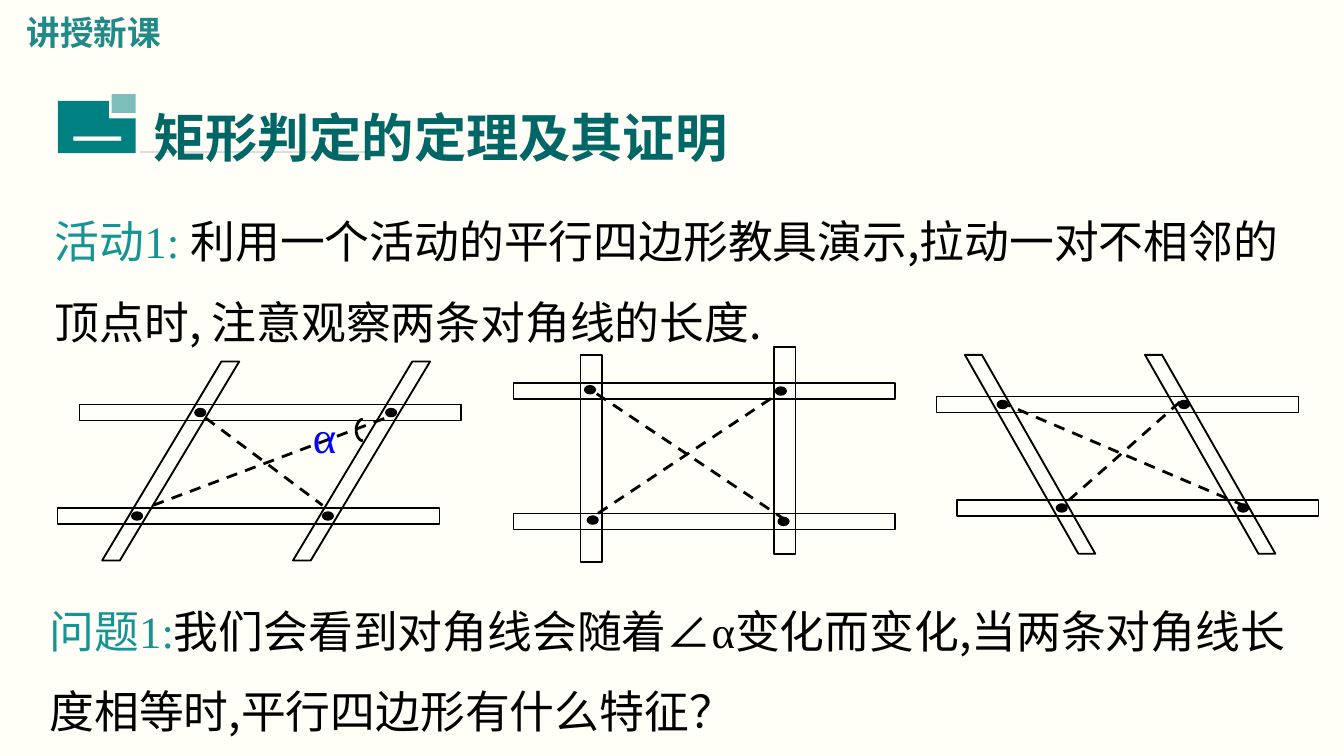
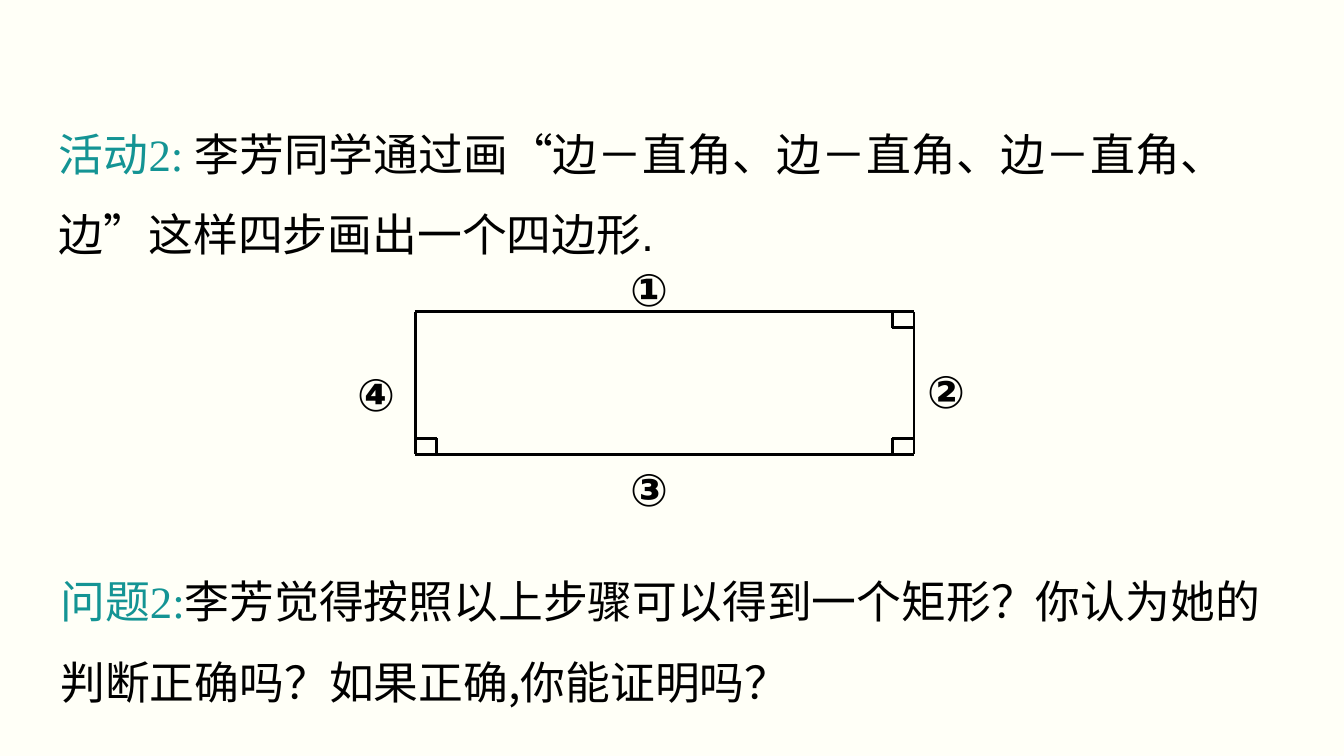
"""Build two lesson slides on how to tell a rectangle."""
from dataclasses import dataclass
from math import cos, pi, sin

from lxml.etree import SubElement
from pptx import Presentation
from pptx.dml.color import RGBColor as Rgb
from pptx.enum.dml import MSO_LINE as Dash
from pptx.enum.shapes import MSO_CONNECTOR as Link, MSO_SHAPE as Kind
from pptx.enum.text import MSO_ANCHOR as Anchor, MSO_AUTO_SIZE as Fit, PP_ALIGN as Align
from pptx.oxml.ns import qn
from pptx.util import Pt

PX = 9144


@dataclass(frozen=True)
class Theme:
    """Colours, fonts and type sizes."""
    back: str = "FFFFF7"
    ink: str = "000000"
    teal: str = "008080"
    head: str = "006666"
    tab: str = "228989"
    label: str = "149494"
    angle: str = "0000FF"
    rule: str = "DDDDDD"
    sans: str = "Arial"
    serif: str = "Times New Roman"
    han: str = "Noto Sans CJK SC"
    small: int = 18
    body: int = 24
    big: int = 28
    thin: float = 0.75
    mid: float = 1
    bold: float = 1.5


T = Theme()


@dataclass(frozen=True)
class Frame:
    """Parts of a hinged frame, relative to its box."""
    box: tuple
    width: int
    bars: tuple
    kind: Kind
    size: tuple
    rails: tuple
    dots: tuple
    dashes: tuple
    flip: bool = False


FRAMES = (
    Frame((43, 269), 284, ((16, 32), (0, 109)), Kind.PARALLELOGRAM, (102, 148),
          ((175, 0), (33, 0)), ((102, 35), (244, 35), (197, 112), (55, 112)),
          ((110, 42, 197, 107), (71, 107, 244, 42))),
    Frame((382, 258), 284, ((0, 124), (0, 27)), Kind.RECTANGLE, (16, 154),
          ((50, 6), (194, 0)), ((197, 127), (55, 126), (195, 30), (53, 29)),
          ((63, 124, 197, 35), (62, 35, 204, 130))),
    Frame((697, 264), 269, ((0, 31), (15, 108)), Kind.PARALLELOGRAM, (97, 148),
          ((21, 0), (155, 0)), ((180, 34), (45, 34), (89, 111), (224, 111)),
          ((181, 35, 94, 112), (47, 35, 228, 112)), True),
)


def emu(*nums):
    """Turn px into EMU."""
    return [round(n * PX) for n in nums]


def paint(shape, fill=None, line=None, width=T.thin):
    """Set the fill, line and shadow of a shape."""
    shape.shadow.inherit = False
    if fill:
        shape.fill.solid()
        shape.fill.fore_color.rgb = Rgb.from_string(fill)
    else:
        shape.fill.background()
    if line:
        shape.line.color.rgb = Rgb.from_string(line)
        shape.line.width = Pt(width)
    else:
        shape.line.fill.background()
    return shape


def block(slide, kind, box, **look):
    """Add a preset shape."""
    return paint(slide.shapes.add_shape(kind, *emu(*box)), **look)


def trace(slide, points, close, **look):
    """Add an outline through points."""
    pen = slide.shapes.build_freeform(*emu(*points[0]))
    pen.add_line_segments([emu(*p) for p in points[1:]], close=close)
    return paint(pen.convert_to_shape(), **look)


def rule(slide, ends, color=T.ink, width=T.bold, dash=False):
    """Add a straight line."""
    line = slide.shapes.add_connector(Link.STRAIGHT, *emu(*ends))
    line.line.color.rgb = Rgb.from_string(color)
    line.line.width = Pt(width)
    if dash:
        line.line.dash_style = Dash.DASH
    SubElement(line._element.spPr, qn("a:effectLst"))


def style(font, size, face, color, bold=False):
    """Set a font."""
    font.size, font.name, font.bold = Pt(size), face, bold
    font.color.rgb = Rgb.from_string(color)


def east(para):
    """Give the runs of a paragraph their Chinese font."""
    for run in para.runs:
        props = run._r.get_or_add_rPr()
        ea = props.makeelement(qn("a:ea"), {"typeface": T.han})
        latin = props.find(qn("a:latin"))
        if latin is None:
            props.append(ea)
        else:
            latin.addnext(ea)


def write(shape, text, size, face, color, bold=False, wrap=True):
    """Write one line of even text into a shape."""
    frame = shape.text_frame
    frame.word_wrap, frame.auto_size = wrap, Fit.SHAPE_TO_FIT_TEXT
    frame.vertical_anchor = Anchor.TOP
    para = frame.paragraphs[0]
    para.text, para.alignment = text, Align.LEFT
    style(para.font, size, face, color, bold)
    east(para)


def note(slide, box, *args, **look):
    """Add a text box with one line of text."""
    write(slide.shapes.add_textbox(*emu(*box)), *args, **look)


def prose(slide, spot, label, *parts):
    """Add a task: a teal label and black text in (face, text) parts."""
    frame = slide.shapes.add_textbox(*emu(*spot, 945, 131)).text_frame
    frame.word_wrap, frame.auto_size = True, Fit.SHAPE_TO_FIT_TEXT
    para = frame.paragraphs[0]
    para.line_spacing = 1.5
    for color, face, text in [(T.label, T.serif, label)] + [(T.ink, *p) for p in parts]:
        run = para.add_run()
        run.text = text
        style(run.font, T.body, face, color)
    east(para)


def banner(slide, box, text):
    """Draw the heading with its icon."""
    x, y = box
    rule(slide, (x + 61, y + 43, x + 244, y + 43), T.rule, T.mid)
    steps = ((0, 5), (38, 5), (38, 18), (58, 18), (58, 44), (0, 44))
    trace(slide, [(x + a, y + b) for a, b in steps], True, fill=T.teal)
    chip = block(slide, Kind.RECTANGLE, (x + 40, y, 18, 14), fill=T.teal)
    tint = chip._element.spPr.find(qn("a:solidFill"))[0]
    SubElement(tint, qn("a:alpha"), val="51000")
    title = slide.shapes.title
    title.left, title.top, title.width, title.height = emu(x + 61, y + 3, 452, 57)
    write(title, text, T.big, T.han, T.head, bold=True, wrap=False)
    chip._element.addnext(title._element)
    note(slide, (x, y + 5, 61, 57), "一", T.big, T.sans, T.back)


def hinge(slide, frame):
    """Draw a hinged frame with its diagonals."""
    x, y = frame.box
    for a, b in frame.bars:
        block(slide, Kind.RECTANGLE, (x + a, y + b, frame.width, 12), line=T.ink)
    for a, b in frame.rails:
        rail = block(slide, frame.kind, (x + a, y + b, *frame.size), line=T.ink, width=T.mid)
        if frame.kind == Kind.PARALLELOGRAM:
            rail.adjustments[0] = 0.87
        if frame.flip:
            rail._element.spPr.xfrm.set("flipH", "1")
    for a, b in frame.dots:
        block(slide, Kind.OVAL, (x + a, y + b, 8, 6), fill=T.ink, line=T.ink)
    for a, b, c, d in frame.dashes:
        rule(slide, (x + a, y + b, x + c, y + d), dash=True)


def angle(slide, box):
    """Mark the angle with an arc and its letter."""
    x, y = box
    turns = [pi * i / 12 for i in range(13)]
    arc = [(x + 47 - 5 * sin(t), y + 21 - 8 * cos(t)) for t in turns]
    trace(slide, arc, False, line=T.ink, width=T.bold)
    note(slide, (x, y, 47, 50), "α", T.body, T.serif, T.angle)


def sketch(slide, box):
    """Draw the four numbered sides and three right angles."""
    x, y, w, h = box
    r, b = x + w, y + h
    for ends in ((x, y, r, y), (r, y, r, b), (x, b, r, b), (x, y, x, b)):
        rule(slide, ends)
    for a, c, dx, dy in ((r, y, -16, 12), (r, b, -16, -12), (x, b, 16, -12)):
        rule(slide, (a + dx, c, a + dx, c + dy))
        rule(slide, (a + dx, c + dy, a, c + dy))
    spots = ((150, -42), (w, 34), (150, h + 1), (-53, 36))
    for mark, (a, c) in zip("①②③④", spots):
        note(slide, (x + a, y + c, 54, 50), mark, T.body, T.sans, T.ink, bold=True, wrap=False)


def start(deck, layout):
    """Add a slide with the shared background."""
    slide = deck.slides.add_slide(deck.slide_layouts[layout])
    slide.background.fill.solid()
    slide.background.fill.fore_color.rgb = Rgb.from_string(T.back)
    return slide


def first(deck):
    """Build the slide with the hinged frames."""
    slide = start(deck, 5)
    banner(slide, (43, 70), "矩形判定的定理及其证明")
    prose(slide, (31, 134), "活动1: ",
          (T.han, "利用一个活动的平行四边形教具演示,拉动一对不相邻的顶点时, 注意观察两条对角线的长度."))
    for frame in FRAMES:
        hinge(slide, frame)
    prose(slide, (27, 424), "问题1:",
          (T.serif, "我们会看到对角线会随着∠α变化而变化"),
          (T.han, ",当两条对角线长度相等时,平行四边形有什么特征？"))
    angle(slide, (223, 299))
    note(slide, (10, 4, 122, 40), "讲授新课", T.small, T.sans, T.tab, bold=True, wrap=False)


def second(deck):
    """Build the slide with the four-step sketch."""
    slide = start(deck, 6)
    prose(slide, (34, 69), "活动2: ",
          (T.sans, "李芳同学通过画"), (T.han, "“"),
          (T.sans, "边－直角、边－直角、边－直角、边"), (T.han, "”"),
          (T.sans, "这样四步画出一个四边形."))
    sketch(slide, (309, 232, 371, 106))
    prose(slide, (35, 402), "问题2:",
          (T.sans, "李芳觉得按照以上步骤可以得到一个矩形？你认为她的判断正确吗？如果正确"),
          (T.han, ","), (T.sans, "你能证明吗？"))


def main():
    """Build and save the deck."""
    deck = Presentation()
    deck.slide_width = 1000 * PX
    deck.slide_height = deck.slide_width * 9 // 16
    first(deck)
    second(deck)
    deck.save("out.pptx")


if __name__ == "__main__":
    main()
